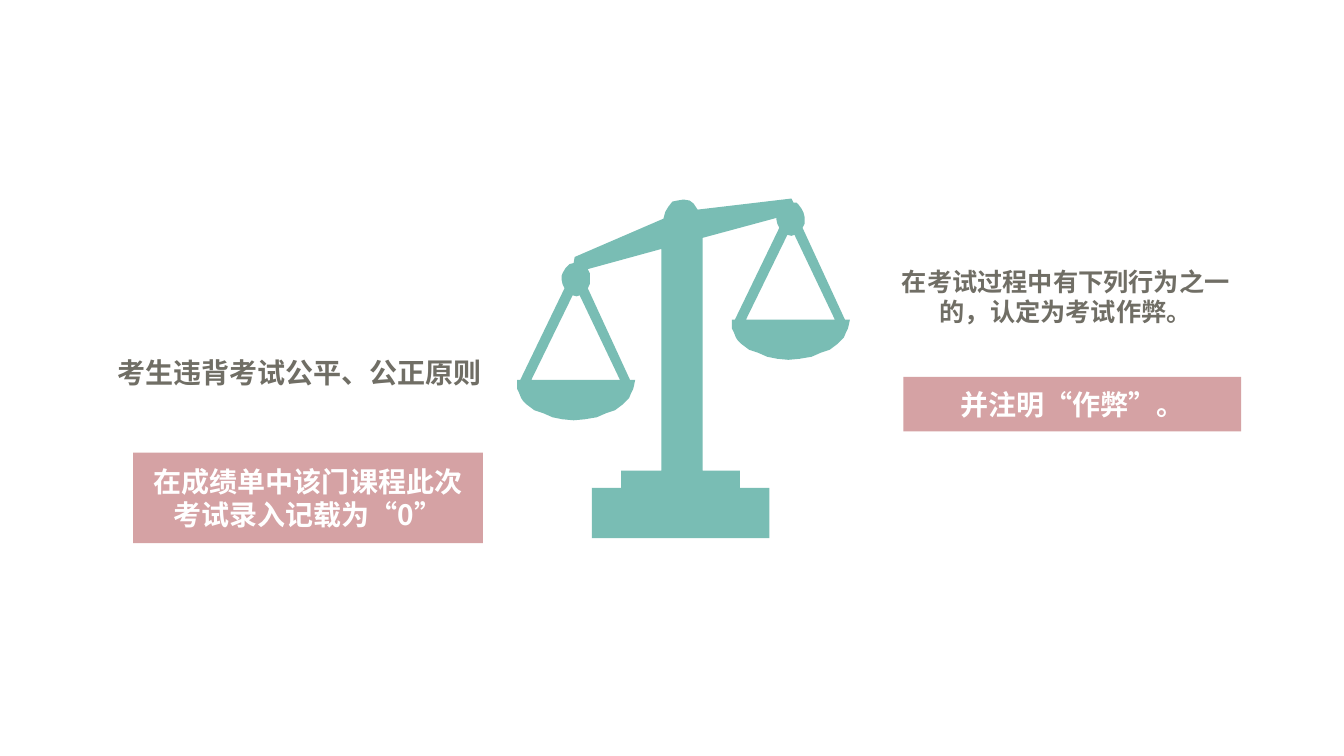
from lxml import etree
from pptx import Presentation
from pptx import util as u
from pptx.dml.color import RGBColor
from pptx.enum import shapes, text
from pptx.oxml.ns import qn

TEAL = RGBColor(0x79, 0xBD, 0xB4)
ROSE = RGBColor(0xD5, 0xA2, 0xA4)
GREY = RGBColor(0x70, 0x6E, 0x65)
WHITE = RGBColor(0xFF, 0xFF, 0xFF)

# The grid has 1333 columns and 750 rows, each a hundredth of an inch
COLUMNS, ROWS = 1333, 750
CELL = u.Inches(0.01)

# Outline of the scale, in grid cells, from the base up and around
BASE_LEFT = [(587, 484), (616, 484), (616, 467), (656, 467)]
BEAM_LEFT_UNDERSIDE = [(656, 247), (583, 267), (585, 271)]
HANGER = [
    (585, 277), (585, 282), (583, 286), (625, 377), (630, 377),
    (629, 382), (628, 386), (626, 390), (624, 395), (621, 398), (618, 401),
    (610, 407), (601, 410), (592, 414), (580, 416), (569, 417), (558, 416),
    (548, 414), (539, 410), (530, 407), (522, 401), (519, 398), (517, 395),
    (515, 390), (513, 386), (513, 377), (516, 377),
    (560, 286), (558, 282), (557, 277),
]
LEFT_RING_TOP = [(557, 274), (558, 271), (561, 266), (565, 262), (569, 261)]
BEAM_TOP = [
    (570, 255), (658, 217), (660, 210), (663, 205), (667, 200), (672, 199),
    (678, 198), (684, 199), (688, 202), (692, 208), (785, 197),
]
RIGHT_RING_TOP = [(787, 201), (790, 201), (792, 203), (795, 207), (797, 211), (798, 215)]
BEAM_RIGHT_UNDERSIDE = [(771, 216), (697, 236)]
BASE_RIGHT = [(697, 467), (734, 467), (734, 484), (763, 484), (763, 534), (587, 534)]
HANGER_OPENING = [(575, 293), (572, 294), (568, 293), (527, 377), (615, 377)]


def raised(points):
    """Move points from the left pan to the higher right pan."""
    return [(x + 213, y - 60) for x, y in points]


class Page:
    font = "Noto Sans CJK SC"

    def __init__(self, deck):
        self.shapes = deck.slides.add_slide(deck.slide_layouts[6]).shapes

    def set_words(self, box, words, size, color):
        frame = box.text_frame
        frame.word_wrap = True
        para = frame.paragraphs[0]
        para.text = words
        para.alignment = text.PP_ALIGN.CENTER
        font = para.font
        font.name, font.size, font.bold = self.font, u.Pt(size), True
        font.color.rgb = color
        # Chinese characters take the East Asian typeface
        properties = para._p.pPr.find(qn("a:defRPr"))
        etree.SubElement(properties, qn("a:ea"), typeface=self.font)

    def label(self, column, row, width, height, words, size):
        box = self.shapes.add_textbox(*(n * CELL for n in (column, row, width, height)))
        self.set_words(box, words, size, GREY)

    def banner(self, column, row, width, height, words, size=20):
        box = self.shapes.add_shape(
            shapes.MSO_SHAPE.RECTANGLE, *(n * CELL for n in (column, row, width, height)))
        self.paint(box, ROSE)
        box.text_frame.vertical_anchor = text.MSO_ANCHOR.MIDDLE
        self.set_words(box, words, size, WHITE)

    def outline(self, contours, color):
        first = contours[0]
        builder = self.shapes.build_freeform(*first[0], scale=CELL)
        builder.add_line_segments(first[1:], close=True)
        for contour in contours[1:]:
            builder.move_to(*contour[0])
            builder.add_line_segments(contour[1:], close=True)
        self.paint(builder.convert_to_shape(), color)

    def paint(self, shape, color):
        shape.shadow.inherit = False
        shape.fill.solid()
        shape.fill.fore_color.rgb = color
        shape.line.fill.background()


def main():
    deck = Presentation()
    deck.slide_width, deck.slide_height = COLUMNS * CELL, ROWS * CELL
    page = Page(deck)

    # Scale, with an opening above each pan
    body = (BASE_LEFT + BEAM_LEFT_UNDERSIDE + HANGER + LEFT_RING_TOP + BEAM_TOP
            + RIGHT_RING_TOP + raised(HANGER) + BEAM_RIGHT_UNDERSIDE + BASE_RIGHT)
    page.outline([body, raised(HANGER_OPENING), HANGER_OPENING], TEAL)

    # Rules
    page.label(96, 348, 402, 44, "考生违背考试公平、公正原则", 20)
    page.label(884, 259, 346, 71, "在考试过程中有下列行为之一的，认定为考试作弊。", 18)

    # Consequences
    page.banner(132, 449, 347, 90, "在成绩单中该门课程此次考试录入记载为“0”")
    page.banner(896, 374, 335, 54, "并注明“作弊”。")

    deck.save("out.pptx")


if __name__ == "__main__":
    main()
